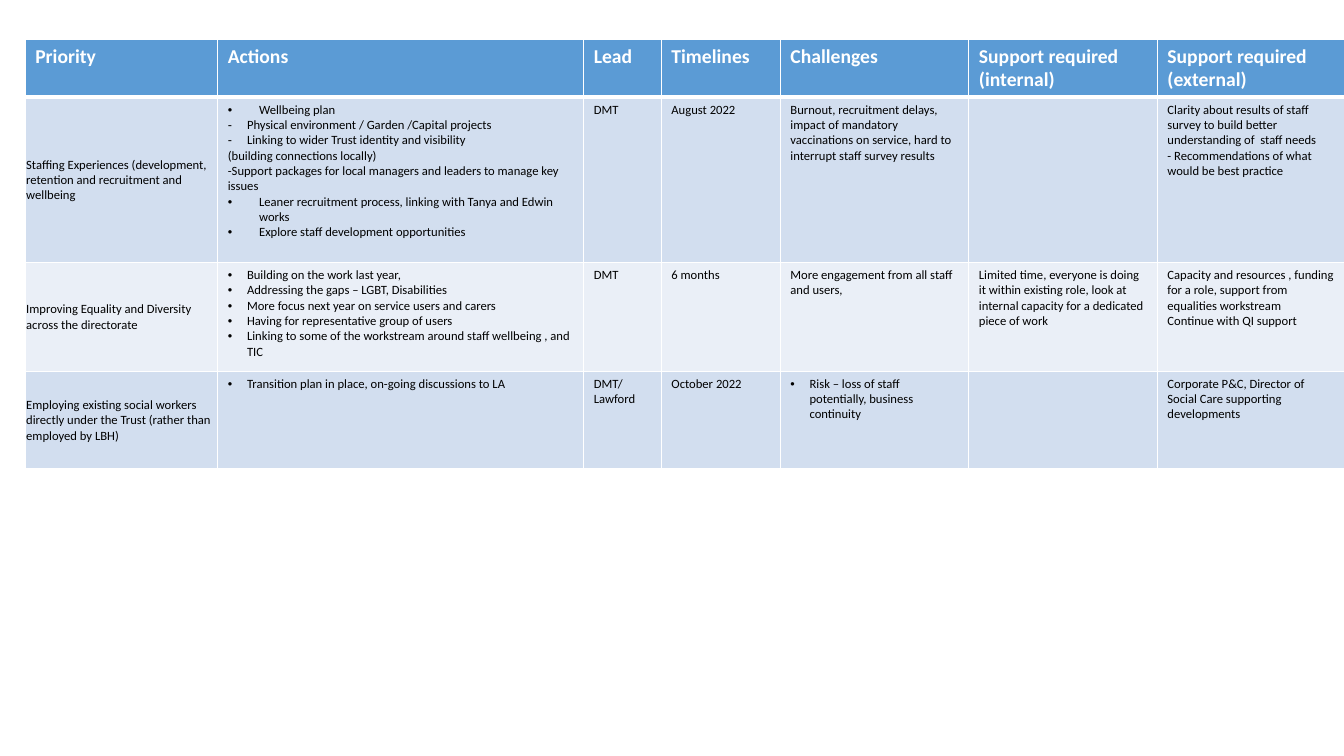
from lxml import etree
from pptx import Presentation
from pptx import util as u
from pptx.dml.color import RGBColor
from pptx.enum import text
from pptx.oxml import ns

COLORS = {"header": "5B9BD5", "odd": "D2DEEF", "even": "EAEFF7",
          "white": "FFFFFF", "black": "000000"}
FONT = "Calibri"

# Table grid, in inches
LEFT, TOP = 0.25, 0.39
COLS = [1.91, 3.63, 0.77, 1.18] + [1.87] * 3
ROWS = [0.53, 1.64, 1.08, 0.97]

HEADERS = ["Priority", "Actions", "Lead", "Timelines", "Challenges",
           "Support required (internal)", "Support required (external)"]


def item(words, mark="•", indent=0.19):
    """A list paragraph: its words, bullet mark and hanging indent."""
    return words, mark, indent


# One list of paragraphs for each cell
BODY = [
    [
        ["Staffing Experiences (development, retention and recruitment and wellbeing"],
        [item("Wellbeing plan", indent=0.31),
         item("Physical environment / Garden /Capital projects", "-"),
         item("Linking to wider Trust identity and visibility", "-"),
         "(building connections locally)",
         "-Support packages for local managers and leaders to manage key issues",
         item("Leaner recruitment process, linking with Tanya and Edwin works", indent=0.31),
         item("Explore staff development opportunities", indent=0.31)],
        ["DMT"],
        ["August 2022"],
        ["Burnout, recruitment delays, impact of mandatory vaccinations on service, "
         "hard to interrupt staff survey results"],
        [],
        ["Clarity about results of staff survey to build better understanding of  staff needs",
         "- Recommendations of what would be best practice"],
    ],
    [
        ["Improving Equality and Diversity across the directorate"],
        [item("Building on the work last year,"),
         item("Addressing the gaps – LGBT, Disabilities"),
         item("More focus next year on service users and carers"),
         item("Having for representative group of users"),
         item("Linking to some of the workstream around staff wellbeing , and TIC")],
        ["DMT"],
        ["6 months"],
        ["More engagement from all staff and users,"],
        ["Limited time, everyone is doing it within existing role, look at internal "
         "capacity for a dedicated piece of work"],
        ["Capacity and resources , funding for a role, support from equalities workstream",
         "Continue with QI support"],
    ],
    [
        ["Employing existing social workers directly under the Trust "
         "(rather than employed by LBH)"],
        [item("Transition plan in place, on-going discussions to LA")],
        ["DMT/Lawford"],
        ["October 2022"],
        [item("Risk – loss of staff potentially, business continuity")],
        [],
        ["Corporate P&C, Director of Social Care supporting developments"],
    ],
]


def rgb(name):
    return RGBColor.from_string(COLORS[name])


def add_bullet(p, mark, indent):
    pPr = p._p.get_or_add_pPr()
    pPr.set("marL", str(u.Inches(indent)))
    pPr.set("indent", str(-u.Inches(indent)))
    etree.SubElement(pPr, ns.qn("a:buFont"), typeface="Arial")
    etree.SubElement(pPr, ns.qn("a:buChar"), char=mark)


def add_borders(cell, bottom):
    tcPr = cell._tc.get_or_add_tcPr()
    for side, width in (("L", 1), ("R", 1), ("T", 1), ("B", bottom)):
        ln = etree.SubElement(tcPr, ns.qn("a:ln" + side), w=str(u.Pt(width)))
        fill = etree.SubElement(ln, ns.qn("a:solidFill"))
        etree.SubElement(fill, ns.qn("a:srgbClr"), val=COLORS["white"])


def fill_cell(cell, paragraphs, fill, size, color, bold=False, bottom=1):
    add_borders(cell, bottom)
    cell.fill.solid()
    cell.fill.fore_color.rgb = rgb(fill)
    tf = cell.text_frame
    for i, entry in enumerate(paragraphs):
        p = tf.paragraphs[0] if i == 0 else tf.add_paragraph()
        if isinstance(entry, tuple):
            entry, mark, indent = entry
            add_bullet(p, mark, indent)
        r = p.add_run()
        r.text = entry
        r.font.name = FONT
        r.font.size = u.Pt(size)
        r.font.bold = bold
        r.font.color.rgb = rgb(color)


def center_priority(cell):
    cell.vertical_anchor = text.MSO_ANCHOR.MIDDLE
    cell.margin_left = cell.margin_right = cell.margin_top = u.Inches(0.01)
    cell.margin_bottom = 0


def add_plan_table(s):
    table = s.shapes.add_table(
        len(ROWS), len(COLS), u.Inches(LEFT), u.Inches(TOP),
        u.Inches(sum(COLS)), u.Inches(sum(ROWS))).table
    for column, width in zip(table.columns, COLS):
        column.width = u.Inches(width)
    for row, height in zip(table.rows, ROWS):
        row.height = u.Inches(height)

    # Header row
    for c, title in enumerate(HEADERS):
        fill_cell(table.cell(0, c), [title], "header", 14, "white", True, 3)

    # Priorities, in alternating bands
    for n, cells in enumerate(BODY, 1):
        for c, paragraphs in enumerate(cells):
            fill_cell(table.cell(n, c), paragraphs,
                      "odd" if n % 2 else "even", 9, "black")
        center_priority(table.cell(n, 0))


def main():
    prs = Presentation()
    prs.slide_width, prs.slide_height = u.Inches(13.33), u.Inches(7.5)
    s = prs.slides.add_slide(prs.slide_layouts[6])
    add_plan_table(s)
    prs.save("out.pptx")


if __name__ == "__main__":
    main()
